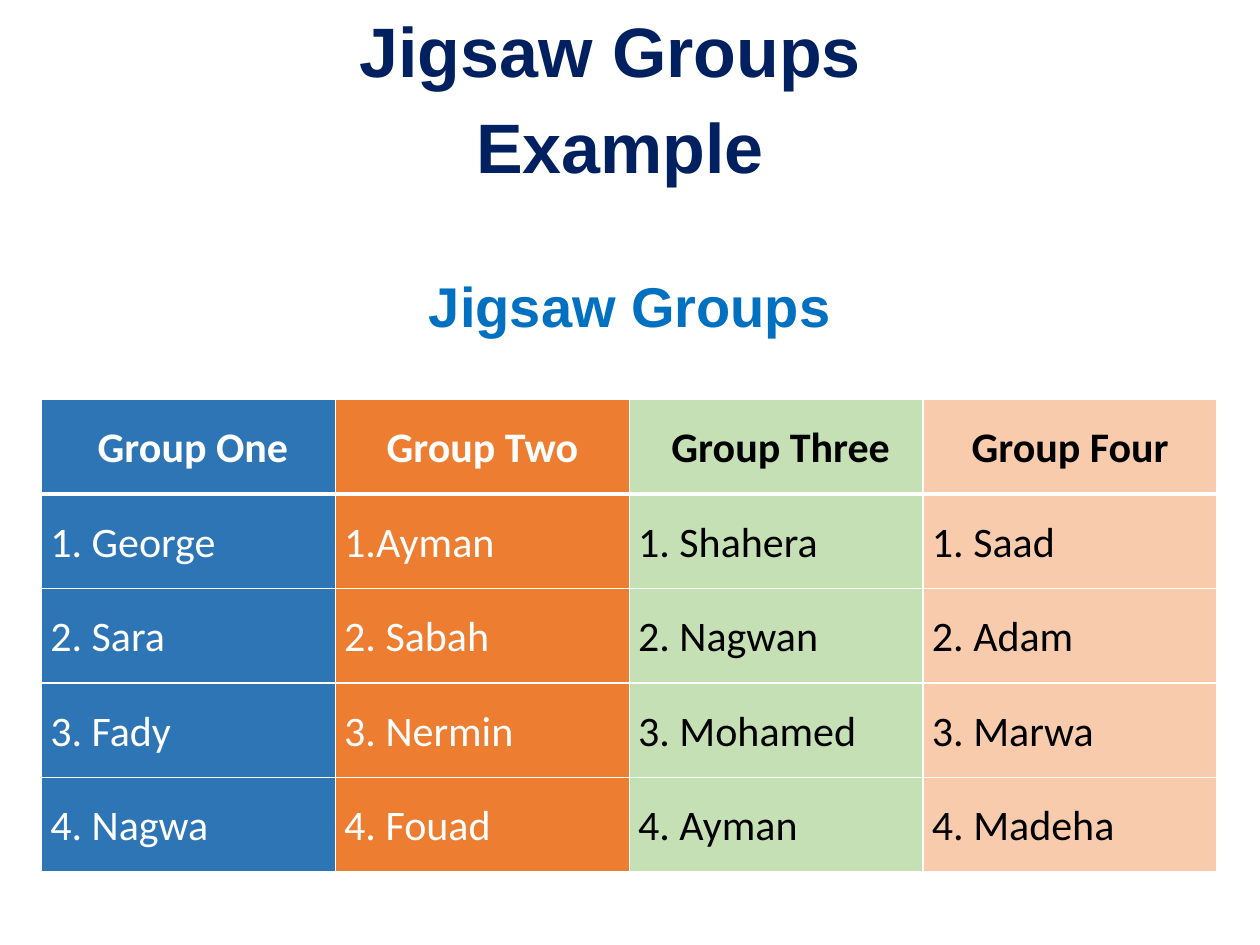
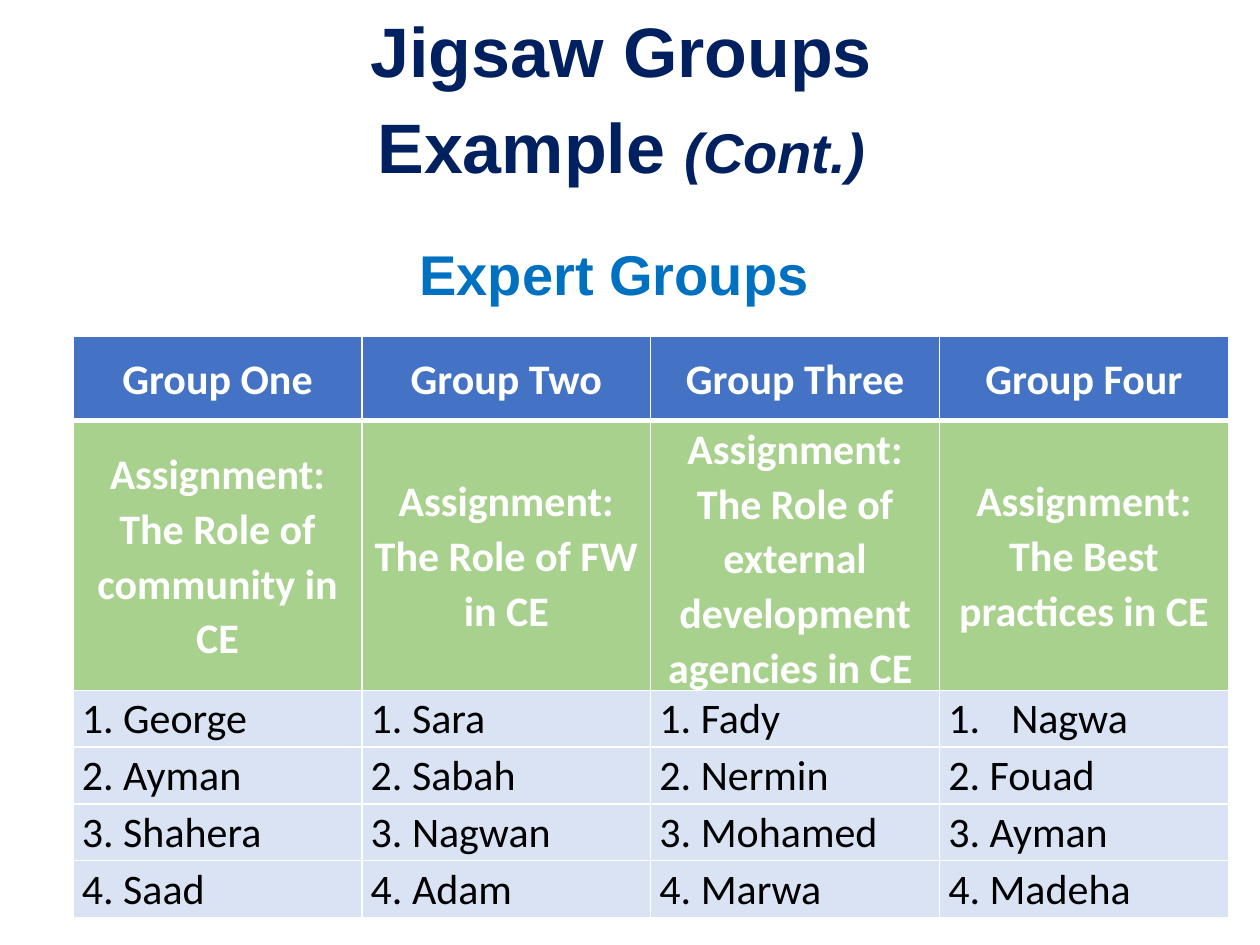
import pptx
import pptx.util
import pptx.dml.color
import pptx.enum.text
import pptx.oxml.ns
import lxml.etree

Inches, Pt = pptx.util.Inches, pptx.util.Pt
RGBColor = pptx.dml.color.RGBColor
CENTER = pptx.enum.text.PP_ALIGN.CENTER
LEFT = pptx.enum.text.PP_ALIGN.LEFT
MIDDLE = pptx.enum.text.MSO_ANCHOR.MIDDLE
TOP = pptx.enum.text.MSO_ANCHOR.TOP

NAVY = RGBColor(0x00, 0x20, 0x60)
SKY = RGBColor(0x00, 0x70, 0xC0)
WHITE = RGBColor(0xFF, 0xFF, 0xFF)
BLACK = RGBColor(0x00, 0x00, 0x00)
BLUE = RGBColor(0x2E, 0x75, 0xB6)
ORANGE = RGBColor(0xED, 0x7D, 0x31)
MINT = RGBColor(0xC5, 0xE0, 0xB4)
PEACH = RGBColor(0xF8, 0xCB, 0xAD)
ROYAL = RGBColor(0x44, 0x72, 0xC4)
GREEN = RGBColor(0xA9, 0xD1, 0x8E)
PALE = RGBColor(0xDA, 0xE3, 0xF3)

TITLE = dict(name="Arial", size=Pt(40), bold=True)
CONTINUED = dict(name="Arial", size=Pt(32), bold=True, italic=True)
SUBTITLE = dict(name="Arial", size=Pt(32), bold=True)
HEADING = dict(name="Calibri", size=Pt(24), bold=True)
MEMBER = dict(name="Calibri", size=Pt(24), bold=False)
CELL = dict(margin_left=Inches(0.07), margin_right=Inches(0.07), margin_top=0, margin_bottom=0)

GROUPS = ["Group One", "Group Two", "Group Three", "Group Four"]

SLIDES = [
    dict(
        title=[("Jigsaw Groups \vExample", TITLE)],
        title_area=(-0.04, 0, 9.92, 1.45),
        subtitle="Jigsaw Groups",
        subtitle_area=(2.96, 2.1, 4.08, 0.64),
        table_area=(0.33, 3.17, 9.33, 3.75),
        row_heights=[0.75] * 5,
        rows=[
            GROUPS,
            ["1. George", "1.Ayman", "1. Shahera", "1. Saad"],
            ["2. Sara", "2. Sabah", "2. Nagwan", "2. Adam"],
            ["3. Fady", "3. Nermin", "3. Mohamed", "3. Marwa"],
            ["4. Nagwa", "4. Fouad", "4. Ayman", "4. Madeha"],
        ],
        heading_rows=1,
        member_anchor=MIDDLE,
        fills=[[BLUE, ORANGE, MINT, PEACH]] * 5,
        inks=[[WHITE, WHITE, BLACK, BLACK]] * 5,
        indents={(0, 0): (0.07, 0), (0, 2): (0.07, 0)},
        numbered=[],
    ),
    dict(
        title=[("Jigsaw Groups\vExample ", TITLE), ("(Cont.)", CONTINUED)],
        title_area=(-0.11, 0, 10.08, 1.45),
        subtitle="Expert Groups",
        subtitle_area=(0, 1.85, 9.75, 0.64),
        table_area=(0.58, 2.67, 9.17, 4.6),
        row_heights=[0.67, 2.13] + [0.45] * 4,
        rows=[
            GROUPS,
            [
                "Assignment: The Role of community in CE",
                "Assignment: The Role of FW in CE",
                "Assignment: The Role of external development agencies in CE ",
                "Assignment: The Best practices in CE",
            ],
            ["1. George", "1. Sara", "1. Fady", "Nagwa"],
            ["2. Ayman", "2. Sabah", "2. Nermin", "2. Fouad"],
            ["3. Shahera", "3. Nagwan", "3. Mohamed", "3. Ayman"],
            ["4. Saad", "4. Adam", "4. Marwa", "4. Madeha"],
        ],
        heading_rows=2,
        member_anchor=TOP,
        fills=[[ROYAL] * 4, [GREEN] * 4] + [[PALE] * 4] * 4,
        inks=[[WHITE] * 4] * 2 + [[BLACK] * 4] * 4,
        indents={(2, 3): (0.5, -0.5)},
        numbered=[(2, 3)],
    ),
]


def apply(target, values):
    for name, value in values.items():
        setattr(target, name, value)


def add_element(parent, tag, **attributes):
    return lxml.etree.SubElement(parent, pptx.oxml.ns.qn(tag), **attributes)


def write(para, spans, color, align, spacing=None):
    apply(para, dict(alignment=align, line_spacing=spacing))
    for text, style in spans:
        for index, line in enumerate(text.split("\v")):
            if index:
                para.add_line_break()
            span = para.add_run()
            span.text = line
            apply(span.font, style)
            span.font.color.rgb = color


def add_text(page, area, spans, color, spacing=None):
    box = page.shapes.add_textbox(*map(Inches, area))
    apply(box.text_frame, dict(word_wrap=True, vertical_anchor=MIDDLE))
    write(box.text_frame.paragraphs[0], spans, color, CENTER, spacing)


def set_borders(cell, row):
    widths = dict(L=1, R=1, T=3 if row == 1 else 1, B=3 if row == 0 else 1)
    properties = cell._tc.get_or_add_tcPr()
    for side, width in widths.items():
        line = add_element(properties, f"a:ln{side}", w=str(Pt(width)))
        add_element(add_element(line, "a:solidFill"), "a:srgbClr", val=str(WHITE))


def add_groups_table(page, content):
    rows = content["rows"]
    area = map(Inches, content["table_area"])
    table = page.shapes.add_table(len(rows), len(GROUPS), *area).table
    apply(table, dict(first_row=False, horz_banding=False))
    for row, height in zip(table.rows, content["row_heights"]):
        row.height = Inches(height)
    for r, texts in enumerate(rows):
        heading = r < content["heading_rows"]
        for c, text in enumerate(texts):
            cell = table.cell(r, c)
            apply(cell, CELL)
            cell.vertical_anchor = MIDDLE if heading else content["member_anchor"]
            set_borders(cell, r)
            cell.fill.solid()
            cell.fill.fore_color.rgb = content["fills"][r][c]
            para = cell.text_frame.paragraphs[0]
            style, align = (HEADING, CENTER) if heading else (MEMBER, LEFT)
            write(para, [(text, style)], content["inks"][r][c], align, 1.07)
            properties = para._p.get_or_add_pPr()
            if (r, c) in content["indents"]:
                margin, indent = content["indents"][r, c]
                properties.set("marL", str(Inches(margin)))
                properties.set("indent", str(Inches(indent)))
            if (r, c) in content["numbered"]:
                add_element(properties, "a:buFont", typeface="+mj-lt")
                add_element(properties, "a:buAutoNum", type="arabicPeriod")


def main():
    deck = pptx.Presentation()
    apply(deck, dict(slide_width=Inches(10), slide_height=Inches(7.5)))
    for content in SLIDES:
        page = deck.slides.add_slide(deck.slide_layouts[6])
        add_text(page, content["title_area"], content["title"], NAVY, 1.14)
        add_groups_table(page, content)
        add_text(page, content["subtitle_area"], [(content["subtitle"], SUBTITLE)], SKY)
    deck.save("out.pptx")


if __name__ == "__main__":
    main()
